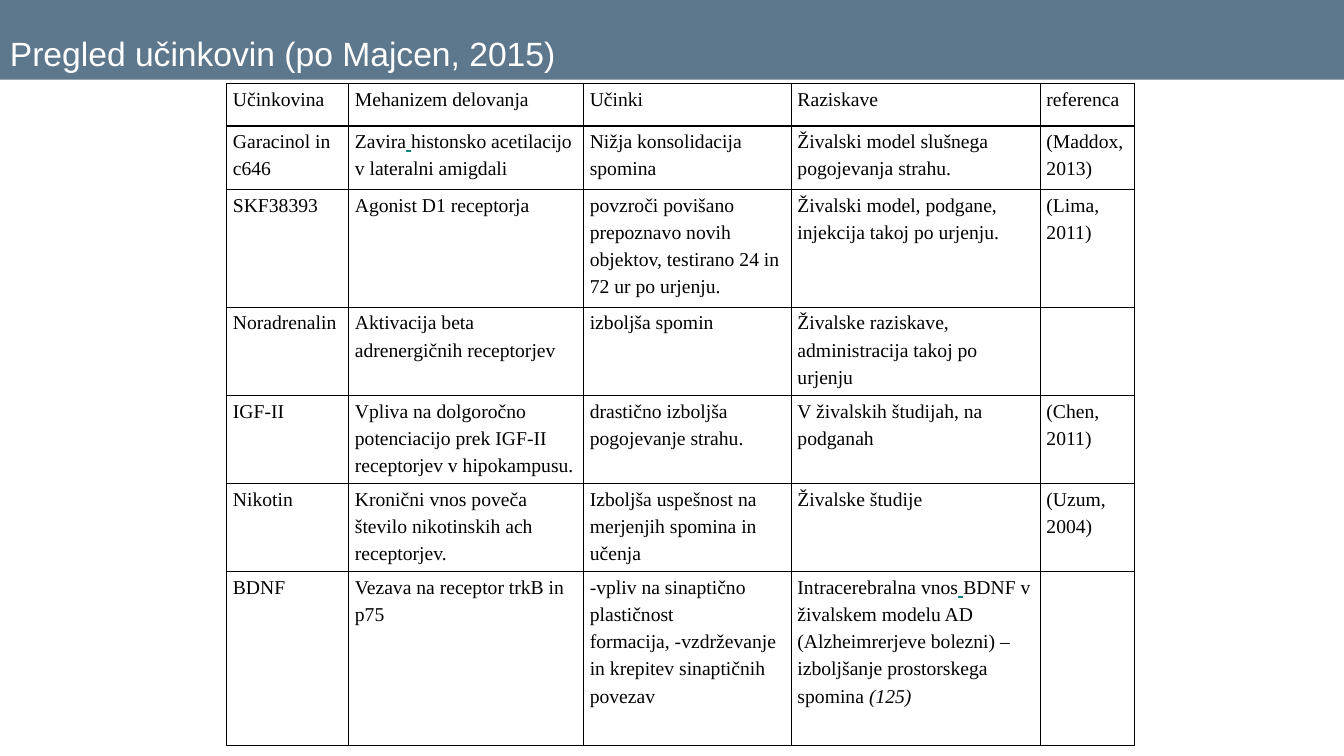
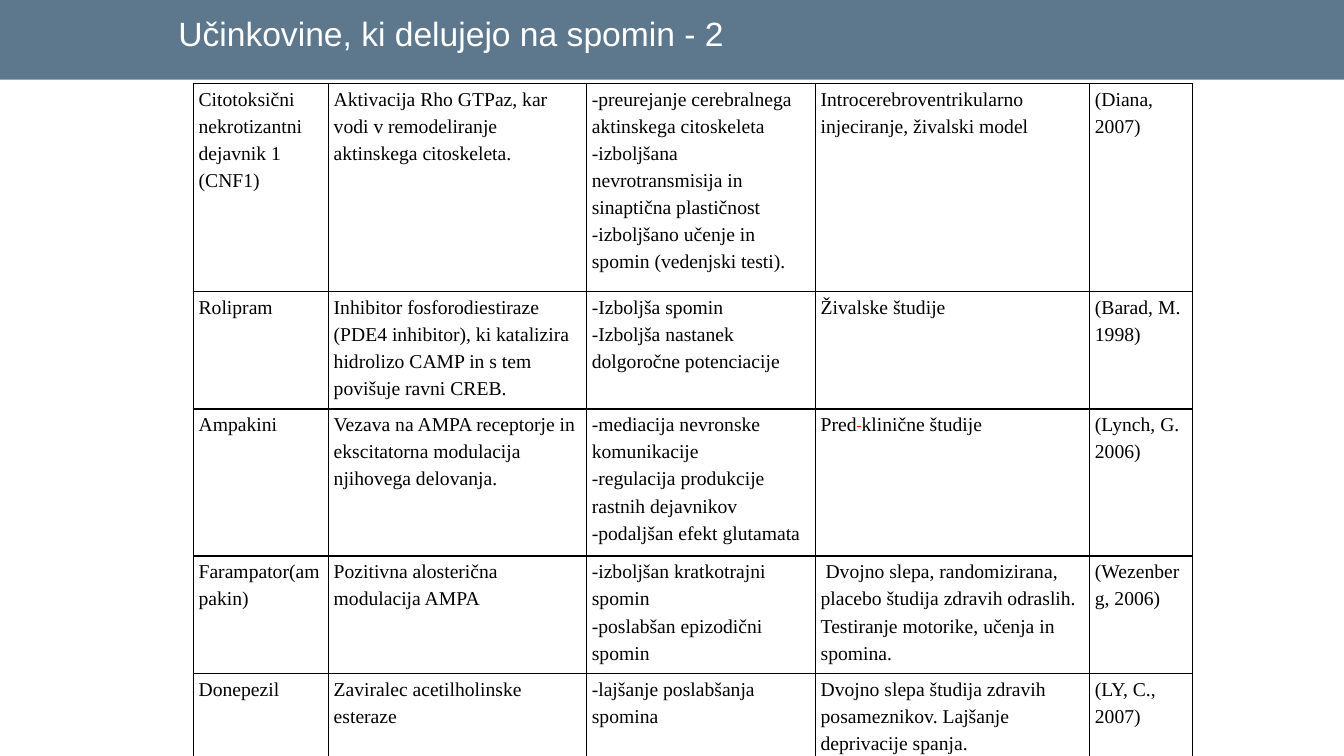
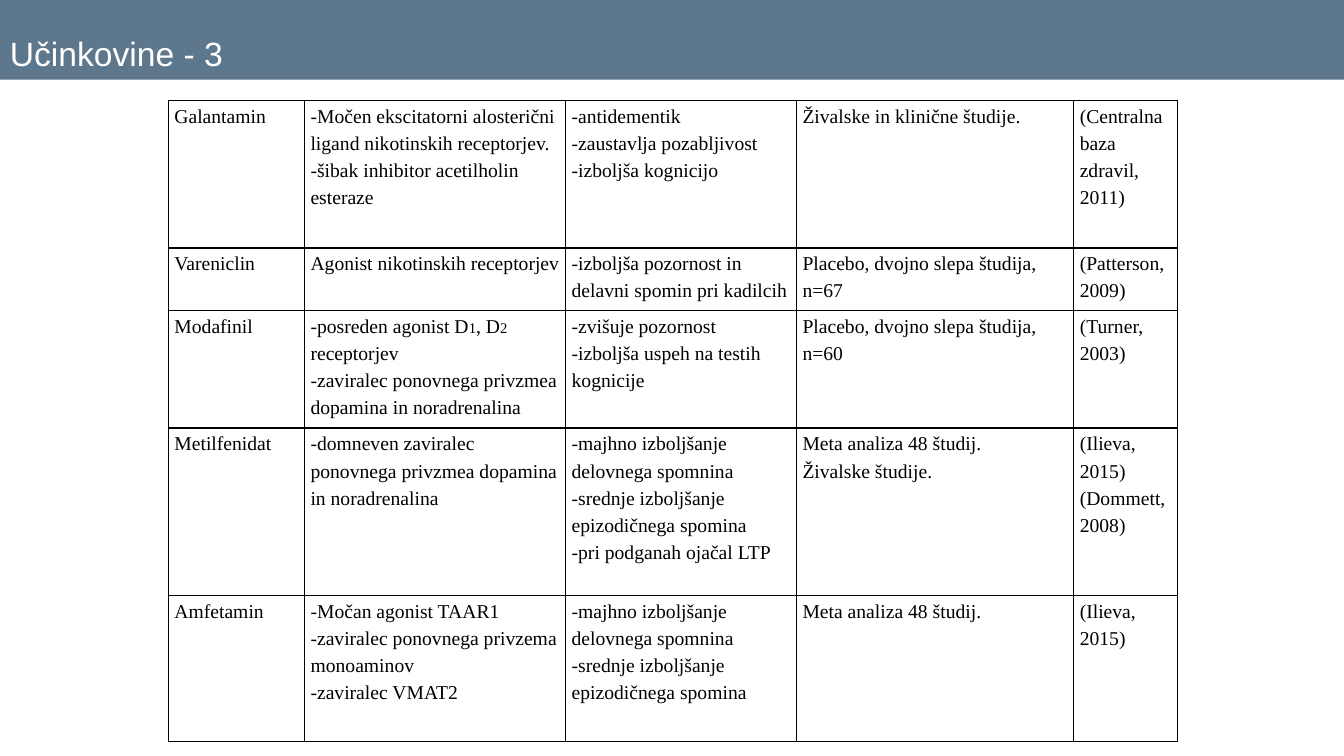
from lxml.etree import SubElement
from pptx import Presentation
from pptx.dml.color import RGBColor
from pptx.enum.shapes import MSO_SHAPE as Shape
from pptx.enum.text import MSO_ANCHOR as Anchor
from pptx.oxml.ns import qn
from pptx.util import Inches, Pt

COLORS = {
    "band": "5D778D",
    "paper": "FFFFFF",
    "ink": "000000",
    "teal": "008080",
    "red": "FF0000",
}
TEAL_SPACE = (" ", {"color": "teal", "underline": True})
RED_SPACE = (" ", {"color": "red", "strike": True})
SMALL = {"size": 10.5}

PAGES = [
    {
        "title": "Pregled učinkovin (po Majcen, 2015)",
        "title_at": (0, 0.08, 13.33, 0.7),
        "table_at": (2.25, 0.83),
        "inset": 0.06,
        "columns": [1.21, 2.33, 2.06, 2.47, 0.93],
        "heights": [0.42, 0.63, 1.15, 0.86, 0.86, 0.86, 1.72],
        "rows": [
            ["Učinkovina", "Mehanizem delovanja", "Učinki", "Raziskave", "referenca"],
            ["Garacinol in c646",
             [[("Zavira", {}), TEAL_SPACE,
               ("histonsko acetilacijo v lateralni amigdali", {})]],
             "Nižja konsolidacija spomina",
             "Živalski model slušnega pogojevanja strahu.",
             "(Maddox, 2013)"],
            ["SKF38393",
             "Agonist D1 receptorja",
             "povzroči povišano prepoznavo novih objektov, testirano 24 in 72 ur po urjenju.",
             "Živalski model, podgane, injekcija takoj po urjenju.",
             "(Lima, 2011)"],
            ["Noradrenalin",
             "Aktivacija beta adrenergičnih receptorjev",
             "izboljša spomin",
             "Živalske raziskave, administracija takoj po urjenju",
             ""],
            ["IGF-II",
             "Vpliva na dolgoročno potenciacijo prek IGF-II receptorjev v hipokampusu.",
             "drastično izboljša pogojevanje strahu.",
             "V živalskih študijah, na podganah",
             "(Chen, 2011)"],
            ["Nikotin",
             "Kronični vnos poveča število nikotinskih ach receptorjev.",
             "Izboljša uspešnost na merjenjih spomina in učenja",
             "Živalske študije",
             "(Uzum, 2004)"],
            ["BDNF",
             "Vezava na receptor trkB in p75",
             "-vpliv na sinaptično plastičnost\n"
             "formacija, -vzdrževanje in krepitev sinaptičnih povezav",
             [[("Intracerebralna vnos", {}), TEAL_SPACE,
               ("BDNF v živalskem modelu AD (Alzheimrerjeve bolezni) – "
                "izboljšanje prostorskega spomina ", {}),
               ("(125)", {"italic": True})]],
             ""],
        ],
    },
    {
        "title": "Učinkovine, ki delujejo na spomin - 2",
        "title_at": (1.67, 0.08, 10, 0.5),
        "table_at": (1.92, 0.83),
        "inset": 0.05,
        "columns": [1.34, 2.56, 2.27, 2.72, 1.02],
        "heights": [2.06, 1.15, 1.44, 1.15, 0.86],
        "rows": [
            ["Citotoksični nekrotizantni dejavnik 1 (CNF1)",
             "Aktivacija Rho GTPaz, kar vodi v remodeliranje aktinskega citoskeleta.",
             "-preurejanje cerebralnega aktinskega citoskeleta\n"
             "-izboljšana nevrotransmisija in sinaptična plastičnost\n"
             "-izboljšano učenje in spomin (vedenjski testi).",
             "Introcerebroventrikularno injeciranje, živalski model",
             "(Diana, 2007)"],
            ["Rolipram",
             "Inhibitor fosforodiestiraze (PDE4 inhibitor), ki katalizira "
             "hidrolizo CAMP in s tem povišuje ravni CREB.",
             "-Izboljša spomin\n-Izboljša nastanek dolgoročne potenciacije",
             "Živalske študije",
             "(Barad, M. 1998)"],
            ["Ampakini",
             "Vezava na AMPA receptorje in ekscitatorna modulacija njihovega delovanja.",
             "-mediacija nevronske komunikacije\n"
             "-regulacija produkcije rastnih dejavnikov\n"
             "-podaljšan efekt glutamata",
             [[("Pred", {}), RED_SPACE, ("klinične študije", {})]],
             "(Lynch, G. 2006)"],
            ["Farampator(ampakin)",
             "Pozitivna alosterična modulacija AMPA",
             "-izboljšan kratkotrajni spomin\n-poslabšan epizodični spomin",
             " Dvojno slepa, randomizirana, placebo študija zdravih odraslih.\n"
             "Testiranje motorike, učenja in spomina.",
             "(Wezenberg, 2006)"],
            ["Donepezil",
             "Zaviralec acetilholinske esteraze",
             "-lajšanje poslabšanja spomina",
             "Dvojno slepa študija zdravih posameznikov. Lajšanje deprivacije spanja.",
             "(LY, C., 2007)"],
        ],
    },
    {
        "title": "Učinkovine - 3",
        "title_at": (0, 0.08, 13.33, 0.7),
        "table_at": (1.67, 1),
        "inset": 0.06,
        "columns": [1.35, 2.59, 2.29, 2.75, 1.03],
        "heights": [1.46, 0.62, 1.03, 1.66, 1.45],
        "rows": [
            ["Galantamin",
             "-Močen ekscitatorni alosterični ligand nikotinskih receptorjev.\n"
             "-šibak inhibitor acetilholin esteraze",
             "-antidementik\n-zaustavlja pozabljivost\n-izboljša kognicijo",
             "Živalske in klinične študije.",
             "(Centralna baza zdravil, 2011)"],
            ["Vareniclin",
             "Agonist nikotinskih receptorjev",
             "-izboljša pozornost in delavni spomin pri kadilcih",
             "Placebo, dvojno slepa študija, n=67",
             "(Patterson, 2009)"],
            ["Modafinil",
             [[("-posreden agonist D", {}), ("1", SMALL), (", D", {}),
               ("2", SMALL), (" receptorjev", {})],
              [("-zaviralec ponovnega privzmea dopamina in noradrenalina", {})]],
             "-zvišuje pozornost\n-izboljša uspeh na testih kognicije",
             "Placebo, dvojno slepa študija, n=60",
             "(Turner, 2003)"],
            ["Metilfenidat",
             "-domneven zaviralec ponovnega privzmea dopamina in noradrenalina",
             "-majhno izboljšanje delovnega spomnina\n"
             "-srednje izboljšanje epizodičnega spomina\n"
             "-pri podganah ojačal LTP",
             "Meta analiza 48 študij.\nŽivalske študije.",
             "(Ilieva, 2015)\n(Dommett, 2008)"],
            ["Amfetamin",
             "-Močan agonist TAAR1\n"
             "-zaviralec ponovnega privzema monoaminov\n"
             "-zaviralec VMAT2",
             "-majhno izboljšanje delovnega spomnina\n"
             "-srednje izboljšanje epizodičnega spomina",
             "Meta analiza 48 študij.",
             "(Ilieva, 2015)"],
        ],
    },
]


def write(frame, content, spacing=None, **base):
    """Fill a frame from a string, or from paragraphs that are lists of (text, format)."""
    if isinstance(content, str):
        content = [[(line, {})] for line in content.split("\n")]
    for index, pieces in enumerate(content):
        para = frame.add_paragraph() if index else frame.paragraphs[0]
        para.line_spacing = spacing
        for text, changes in pieces:
            look = {**base, **changes}
            span = para.add_run()
            span.text = text
            span.font.name = look["font"]
            span.font.size = Pt(look["size"])
            span.font.color.rgb = RGBColor.from_string(COLORS[look["color"]])
            span.font.italic = look.get("italic")
            span.font.underline = look.get("underline")
            if look.get("strike"):
                span.font._element.set("strike", "sngStrike")


def outline_cell(cell):
    properties = cell._tc.get_or_add_tcPr()
    for side in ("lnL", "lnR", "lnT", "lnB"):
        line = SubElement(properties, qn(f"a:{side}"), w=str(Pt(1)))
        fill = SubElement(line, qn("a:solidFill"))
        SubElement(fill, qn("a:srgbClr"), val=COLORS["ink"])


deck = Presentation()
deck.slide_width = Inches(13.33)
deck.slide_height = Inches(7.5)

for content in PAGES:
    page = deck.slides.add_slide(deck.slide_layouts[6])

    band = page.shapes.add_shape(Shape.RECTANGLE, 0, 0, deck.slide_width, Inches(0.79))
    band.shadow.inherit = False
    band.fill.solid()
    band.fill.fore_color.rgb = RGBColor.from_string(COLORS["band"])
    band.line.fill.background()

    title = page.shapes.add_textbox(*map(Inches, content["title_at"]))
    title.text_frame.word_wrap = True
    title.text_frame.vertical_anchor = Anchor.BOTTOM
    write(title.text_frame, content["title"], font="Arial", size=24, color="paper")

    columns, heights = content["columns"], content["heights"]
    left, top = content["table_at"]
    table = page.shapes.add_table(
        len(heights), len(columns), Inches(left), Inches(top),
        Inches(sum(columns)), Inches(sum(heights))).table
    table.first_row = False
    table.horz_banding = False
    for column, width in zip(table.columns, columns):
        column.width = Inches(width)
    for row, height, texts in zip(table.rows, heights, content["rows"]):
        row.height = Inches(height)
        for cell, text in zip(row.cells, texts):
            cell.margin_left = cell.margin_right = Inches(content["inset"])
            cell.margin_top = cell.margin_bottom = 0
            outline_cell(cell)
            cell.fill.solid()
            cell.fill.fore_color.rgb = RGBColor.from_string(COLORS["paper"])
            write(cell.text_frame, text, spacing=1.25,
                  font="Times New Roman", size=14, color="ink")

deck.save("out.pptx")
